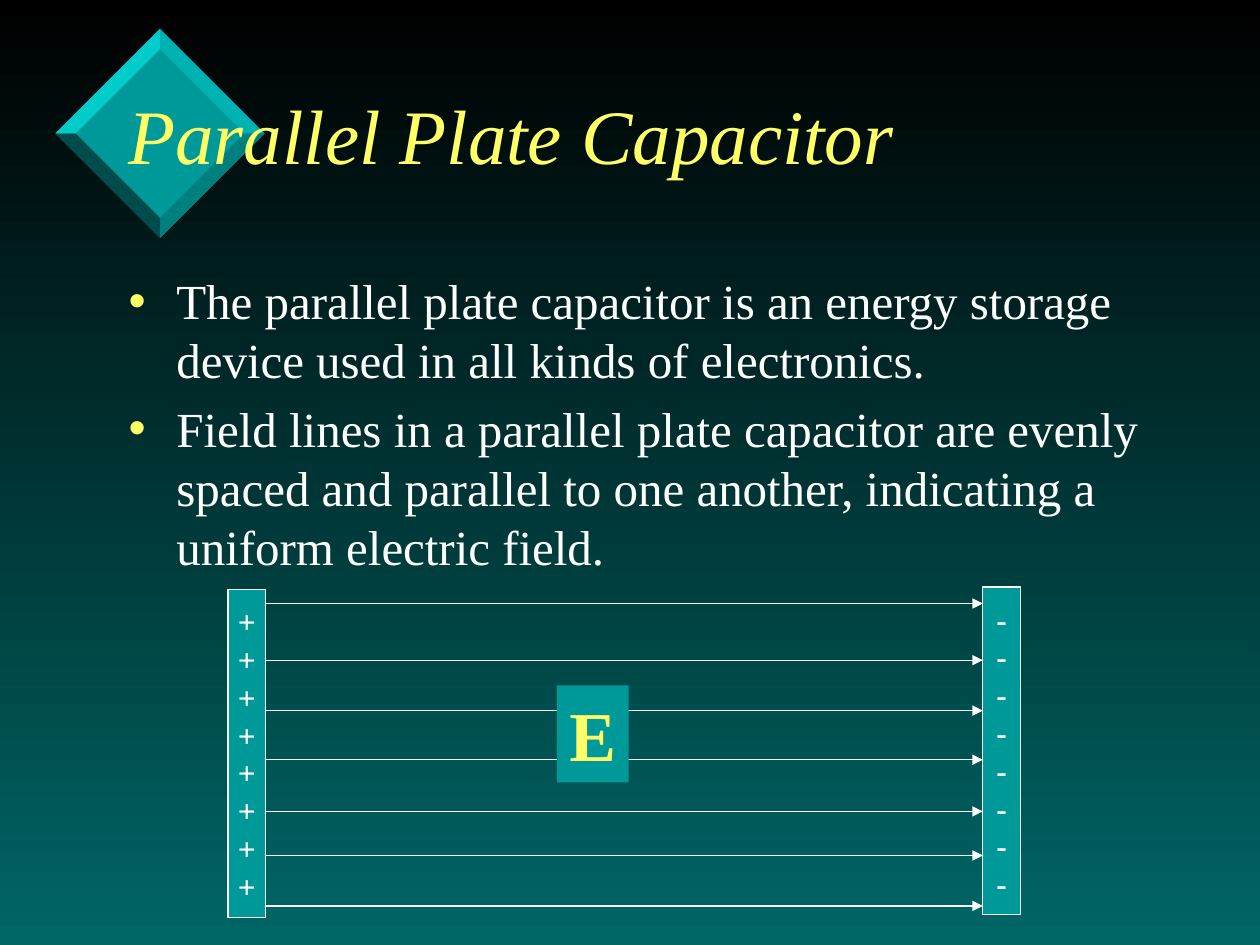
import pptx
import pptx.dml.color
import pptx.enum.shapes
import pptx.enum.text
import pptx.oxml
import pptx.oxml.ns
import pptx.util
from pptx.util import Inches

FONT = "Times New Roman"
TEAL, DARK_TEAL, AQUA = "009999", "006666", "00CCCC"
YELLOW, WHITE, BLACK = "FFFF66", "FFFFFF", "000000"
ANCHOR = pptx.enum.text.MSO_ANCHOR
ALIGN = pptx.enum.text.PP_ALIGN


def color(hex_code):
    return pptx.dml.color.RGBColor.from_string(hex_code)


def add_xml(parent, tag, index=None, **attributes):
    child = pptx.oxml.parse_xml(f"<a:{tag} {pptx.oxml.ns.nsdecls('a')}/>")
    for name, value in attributes.items():
        child.set(name, str(value))
    parent.insert(len(parent) if index is None else index, child)
    return child


class SlideBuilder:
    def __init__(self, slide):
        self.slide = slide
        self.shapes = slide.shapes

    def background(self, top, bottom):
        fill = self.slide.background.fill
        fill.gradient()
        fill.gradient_angle = 270
        for stop, position, shade in zip(fill.gradient_stops, (0, 1), (top, bottom)):
            stop.position = position
            stop.color.rgb = color(shade)

    def paint(self, shape, fill, line=None, alpha=None):
        shape.shadow.inherit = False
        shape.fill.solid()
        shape.fill.fore_color.rgb = color(fill)
        if alpha is not None:
            shade = shape.element.spPr.find(".//" + pptx.oxml.ns.qn("a:srgbClr"))
            add_xml(shade, "alpha", val=alpha * 1000)
        if line:
            shape.line.color.rgb = color(line)
            shape.line.width = pptx.util.Pt(0.75)
        else:
            shape.line.fill.background()

    def set_text(self, shape, lines, size, shade, align=ALIGN.LEFT,
                 anchor=ANCHOR.TOP, wrap=True, bold=False, italic=False):
        frame = shape.text_frame
        frame.text = "\n".join(lines)
        frame.word_wrap = wrap
        frame.auto_size = pptx.enum.text.MSO_AUTO_SIZE.NONE
        frame.vertical_anchor = anchor
        for paragraph in frame.paragraphs:
            paragraph.alignment = align
            font = paragraph.font
            font.name, font.size = FONT, pptx.util.Pt(size)
            font.bold, font.italic = bold, italic
            font.color.rgb = color(shade)

    def placeholder(self, index, left, top, width, height, lines, size, shade, **style):
        holder = self.slide.placeholders[index]
        holder.left, holder.top = Inches(left), Inches(top)
        holder.width, holder.height = Inches(width), Inches(height)
        self.set_text(holder, lines, size, shade, **style)
        # Bring the text in front of what is already drawn
        holder.element.getparent().append(holder.element)
        return holder

    def bullets(self, holder, shade, indent):
        for paragraph in holder.text_frame.paragraphs:
            properties = paragraph._p.get_or_add_pPr()
            properties.set("marL", str(Inches(indent)))
            properties.set("indent", str(-Inches(indent)))
            add_xml(add_xml(properties, "buClr", index=0), "srgbClr", val=shade)

    def facet(self, points, fill, alpha=None):
        corners = [(Inches(x), Inches(y)) for x, y in points]
        builder = self.shapes.build_freeform(*corners[0])
        builder.add_line_segments(corners[1:], close=True)
        self.paint(builder.convert_to_shape(), fill, alpha=alpha)

    def box(self, left, top, width, height, lines, size, shade, line=None, **style):
        rectangle = self.shapes.add_shape(
            pptx.enum.shapes.MSO_SHAPE.RECTANGLE,
            Inches(left), Inches(top), Inches(width), Inches(height))
        self.paint(rectangle, TEAL, line)
        self.set_text(rectangle, lines, size, shade, wrap=False, bold=True, **style)

    def arrow(self, start, end, y):
        connector = self.shapes.add_connector(
            pptx.enum.shapes.MSO_CONNECTOR.STRAIGHT,
            Inches(start), Inches(y), Inches(end), Inches(y))
        connector.line.color.rgb = color(WHITE)
        connector.line.width = pptx.util.Pt(0.75)
        outline = connector.element.spPr.find(pptx.oxml.ns.qn("a:ln"))
        add_xml(outline, "tailEnd", type="triangle")
        add_xml(connector.element.spPr, "effectLst")


def main():
    deck = pptx.Presentation()
    deck.slide_width, deck.slide_height = Inches(10), Inches(7.5)
    page = SlideBuilder(deck.slides.add_slide(deck.slide_layouts[1]))
    page.background(BLACK, DARK_TEAL)

    # Bevelled diamond: full face, then one facet per side
    def diamond(radius):
        x, y = 1.27, 1.06
        return [(x, y - radius), (x + radius, y), (x, y + radius), (x - radius, y)]

    outer, inner = diamond(0.83), diamond(0.67)
    page.facet(outer, TEAL)
    for side, (fill, alpha) in enumerate(
            [(AQUA, 50), (DARK_TEAL, 50), (BLACK, 50), (AQUA, None)]):
        following = (side + 1) % 4
        page.facet([inner[side], outer[side], outer[following], inner[following]],
                   fill, alpha)

    # Title and bullets
    page.placeholder(0, 0.92, 0.46, 8.51, 1.21, ["Parallel Plate Capacitor"],
                     44, YELLOW, anchor=ANCHOR.MIDDLE, italic=True)
    body = page.placeholder(1, 0.92, 2.1, 8.5, 2.18, [
        "The parallel plate capacitor is an energy storage device used in all "
        "kinds of electronics.",
        "Field lines in a parallel plate capacitor are evenly spaced and parallel "
        "to one another, indicating a uniform electric field.",
    ], 28, WHITE)
    page.bullets(body, YELLOW, 0.38)

    # Charged plates
    plate_width, left_plate, right_plate = 0.3, 1.81, 7.8
    for left, top, charge in [(left_plate, 4.68, "+"), (right_plate, 4.66, "-")]:
        page.box(left, top, plate_width, 2.6, [charge] * 8, 18, WHITE, line=WHITE,
                 align=ALIGN.CENTER, anchor=ANCHOR.MIDDLE)

    # Field lines and their label
    for y in (4.79, 5.24, 5.64, 6.03, 6.44, 6.79, 7.19):
        page.arrow(left_plate + plate_width, right_plate, y)
    page.box(4.42, 5.44, 0.57, 0.77, ["E"], 40, YELLOW)

    deck.save("out.pptx")


if __name__ == "__main__":
    main()
